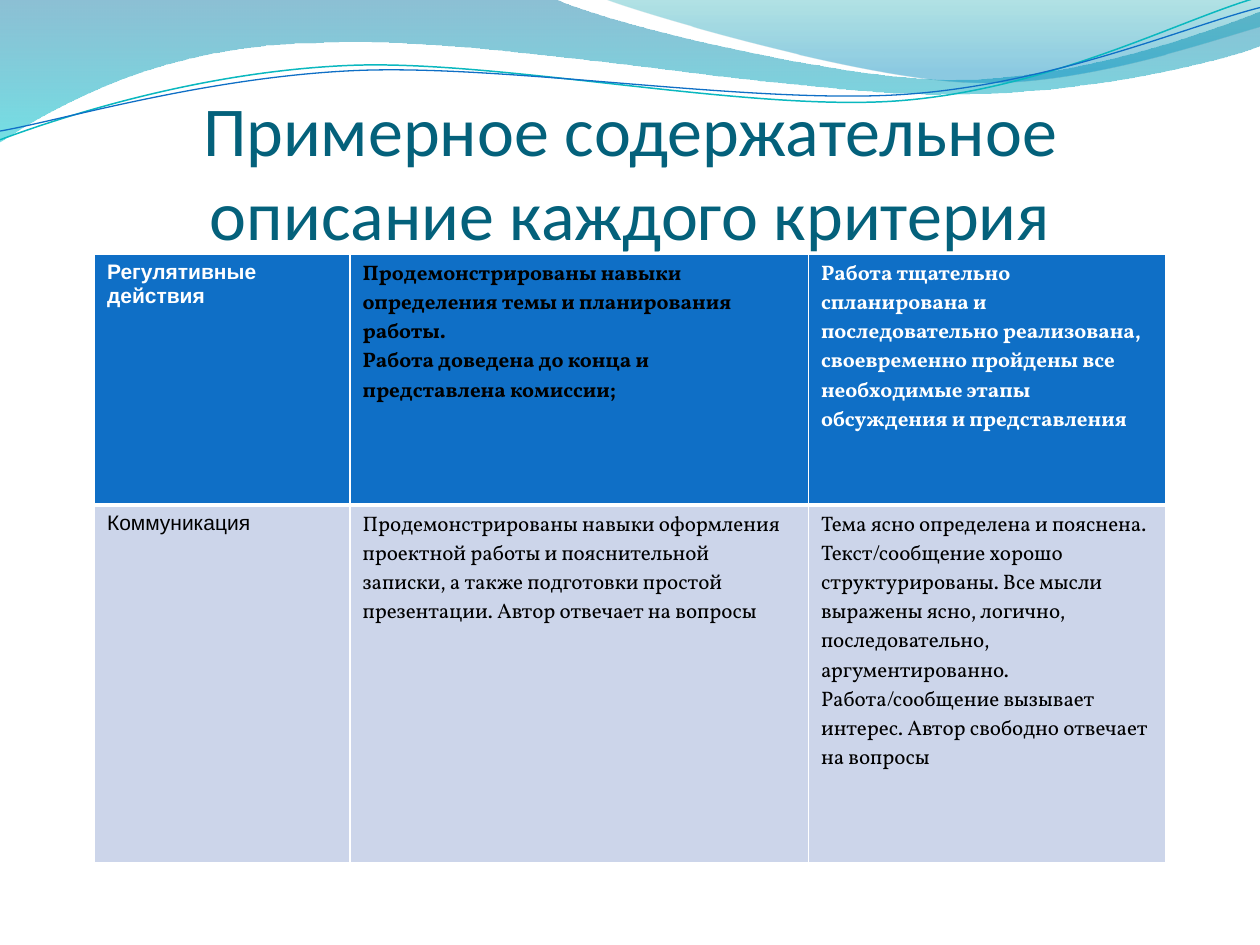
"""Build a slide with a wave header, a title and a table of criteria."""
from math import cos, radians, sin

from lxml.etree import SubElement
from pptx import Presentation
from pptx.dml.color import RGBColor
from pptx.enum.text import MSO_ANCHOR as Anchor, PP_ALIGN as Align
from pptx.oxml import parse_xml
from pptx.oxml.ns import nsdecls, qn
from pptx.util import Pt

TITLE = "Примерное содержательное описание каждого критерия"
TITLE_FORMAT = {"name": "Calibri", "size": Pt(40), "color": "04617B"}
ROWS = [
    [
        ["Регулятивные действия"],
        [
            "Продемонстрированы навыки определения темы и планирования работы.",
            "Работа доведена до конца и представлена комиссии;",
        ],
        ["Работа тщательно спланирована и последовательно реализована, своевременно "
         "пройдены все необходимые этапы обсуждения и представления"],
    ],
    [
        ["Коммуникация"],
        ["Продемонстрированы навыки оформления проектной работы и пояснительной записки, "
         "а также подготовки простой презентации. Автор отвечает на вопросы"],
        ["Тема ясно определена и пояснена. Текст/сообщение хорошо структурированы. "
         "Все мысли выражены ясно, логично, последовательно, аргументированно. "
         "Работа/сообщение вызывает интерес. Автор свободно отвечает на вопросы"],
    ],
]
COLUMN_WIDTHS = [146, 262, 204]
ROW_HEIGHTS = [143.3, 204.5]
COLUMN_FONTS = ["Arial", "Vollkorn", "Vollkorn"]
ROW_FILLS = ["0F6FC6", "CCD5EA"]
TEXT_COLORS = [["FFFFFF", "000000", "FFFFFF"], ["000000"] * 3]
BOTTOM_BORDERS = [3, 1]

WAVES = [
    {
        "box": (-0.7, -0.7, 721.4, 82.1),
        "start": (0, -0.7),
        "segments": [
            (316.8, -0.7),
            (342.7, 12.2, 478.1, 45.4, 545.8, 45.4),
            (614.2, 45.4, 689.8, 18.7, 720, 6.5),
            (720.7, 25.9),
            (707.8, 31.7, 626.4, 54.7, 537.1, 54),
            (447.8, 54, 275, 20.2, 185, 24.5),
            (92.9, 25.2, 33.1, 59.8, -0.7, 81.4),
            (0, -0.7),
        ],
        "stops": [("0074A1", 0, 45), ("00C6CF", 1, 55)],
    },
    {
        "box": (344.9, -0.7, 375.1, 50.4),
        "start": (344.9, -0.7),
        "segments": [
            (366.5, 7.9, 491, 44.6, 553.7, 46.8),
            (616.3, 49.7, 691.9, 23, 720, 15.1),
            (720, 0),
            (344.9, -0.7),
        ],
        "stops": [("00A1A9", 0, 30), ("008BBF", 0.8, 45)],
    },
    {
        "box": (-1.4, 15.8, 721.4, 51.1),
        "rotation": 357.3,
        "start": (0, 79.9),
        "segments": [
            (34.6, 67, 113.8, 41, 199.4, 37.4),
            (284.4, 33.8, 427, 64.1, 513.4, 57.6),
            (599.8, 51.1, 675.4, 10.8, 718.6, -1.4),
        ],
        "line": ("0AB8BF", 0.85),
    },
    {
        "box": (-1.4, 21.6, 722.2, 41.8),
        "rotation": 357.3,
        "start": (0, 74.9),
        "segments": [
            (33.8, 69.1, 118.1, 43.9, 203.8, 40.3),
            (290.2, 36.7, 429.8, 59.8, 516.2, 54),
            (601.9, 48.2, 677.5, 15.1, 720, 4.3),
        ],
        "line": ("0F6FC6", 0.75),
    },
]


def rgb(value):
    return RGBColor.from_string(value)


def format_font(font, values):
    for name, value in values.items():
        if name == "color":
            font.color.rgb = rgb(value)
        else:
            setattr(font, name, value)


def local_point(x, y, box, rotation):
    left, top, width, height = box
    angle = radians(-rotation)
    dx, dy = x - left - width / 2, y - top - height / 2
    return (Pt(width / 2 + dx * cos(angle) - dy * sin(angle)),
            Pt(height / 2 + dx * sin(angle) + dy * cos(angle)))


def draw_outline(shape, wave, rotation):
    outline = next(shape.element.iter(qn("a:path")))
    for child in list(outline):
        outline.remove(child)
    for name, length in zip("wh", wave["box"][2:]):
        outline.set(name, str(Pt(length)))
    for index, segment in enumerate([wave["start"], *wave["segments"]]):
        kind = "moveTo" if index == 0 else "lnTo" if len(segment) == 2 else "cubicBezTo"
        command = SubElement(outline, qn(f"a:{kind}"))
        for x, y in zip(segment[::2], segment[1::2]):
            point = SubElement(command, qn("a:pt"))
            for axis, value in zip("xy", local_point(x, y, wave["box"], rotation)):
                point.set(axis, str(value))
    if "stops" in wave:
        SubElement(outline, qn("a:close"))


def add_wave(slide, wave):
    left, top, width, height = map(Pt, wave["box"])
    rotation = wave.get("rotation", 0)
    builder = slide.shapes.build_freeform(left, top)
    builder.add_line_segments([(left + width, top + height)], close=False)
    shape = builder.convert_to_shape()
    draw_outline(shape, wave, rotation)
    shape.rotation = rotation
    shape.shadow.inherit = False
    if "line" in wave:
        color, weight = wave["line"]
        shape.fill.background()
        shape.line.color.rgb = rgb(color)
        shape.line.width = Pt(weight)
        return
    shape.line.fill.background()
    shape.fill.gradient()
    shape.fill.gradient_angle = 270
    for stop, (color, position, _) in zip(shape.fill.gradient_stops, wave["stops"]):
        stop.color.rgb = rgb(color)
        stop.position = position
    colors = shape.element.spPr.find(qn("a:gradFill")).iter(qn("a:srgbClr"))
    for element, (_, _, opacity) in zip(colors, wave["stops"]):
        SubElement(element, qn("a:alpha")).set("val", str(opacity * 1000))


def add_title(slide):
    frame = slide.shapes.add_textbox(Pt(36), Pt(55.4), Pt(648), Pt(90)).text_frame
    settings = {
        "word_wrap": True, "vertical_anchor": Anchor.BOTTOM, "margin_left": 0,
        "margin_right": 0, "margin_top": Pt(3.6), "margin_bottom": 0,
    }
    for name, value in settings.items():
        setattr(frame, name, value)
    paragraph = frame.paragraphs[0]
    paragraph.text = TITLE
    paragraph.alignment = Align.CENTER
    format_font(paragraph.runs[0].font, TITLE_FORMAT)


def add_borders(cell, bottom):
    properties = cell._tc.get_or_add_tcPr()
    borders = {"lnL": 1, "lnR": 1, "lnT": 1, "lnB": bottom}
    for index, (side, width) in enumerate(borders.items()):
        properties.insert(index, parse_xml(
            f'<a:{side} {nsdecls("a")} w="{Pt(width)}"><a:solidFill>'
            f'<a:srgbClr val="FFFFFF"/></a:solidFill></a:{side}>'
        ))


def add_criteria(slide):
    table = slide.shapes.add_table(
        len(ROWS), len(COLUMN_WIDTHS), Pt(54), Pt(145.26),
        Pt(sum(COLUMN_WIDTHS)), Pt(sum(ROW_HEIGHTS)),
    ).table
    for column, width in zip(table.columns, COLUMN_WIDTHS):
        column.width = Pt(width)
    for i, row in enumerate(ROWS):
        table.rows[i].height = Pt(ROW_HEIGHTS[i])
        for j, lines in enumerate(row):
            cell = table.cell(i, j)
            cell.fill.solid()
            cell.fill.fore_color.rgb = rgb(ROW_FILLS[i])
            add_borders(cell, BOTTOM_BORDERS[i])
            cell.text = "\n".join(lines)
            values = {"name": COLUMN_FONTS[j], "size": Pt(12), "bold": i == 0,
                      "color": TEXT_COLORS[i][j]}
            for paragraph in cell.text_frame.paragraphs:
                format_font(paragraph.runs[0].font, values)


def main():
    presentation = Presentation()
    presentation.slide_width, presentation.slide_height = Pt(720), Pt(540)
    slide = presentation.slides.add_slide(presentation.slide_layouts[6])
    for wave in WAVES:
        add_wave(slide, wave)
    add_title(slide)
    add_criteria(slide)
    presentation.save("out.pptx")


if __name__ == "__main__":
    main()
